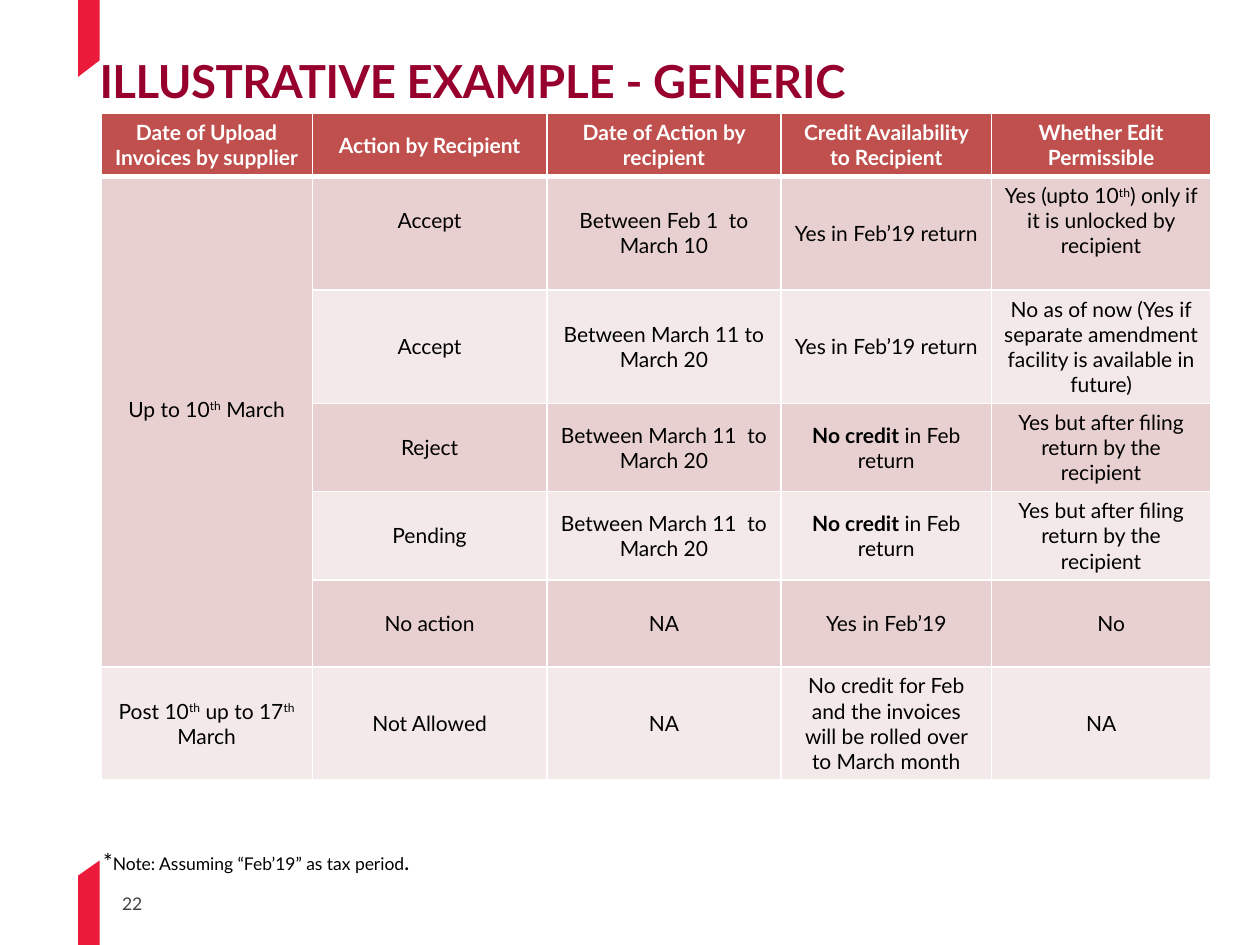
from lxml import etree
from pptx import Presentation
from pptx.dml.color import RGBColor
from pptx.enum.text import MSO_ANCHOR, PP_ALIGN
from pptx.oxml.ns import qn
from pptx.util import Inches, Pt

MIDDLE = MSO_ANCHOR.MIDDLE
CENTER = PP_ALIGN.CENTER
FONT = "Lato"
RED, MAROON = "EC1A3A", "97002D"
HEADER_FILL, BAND_FILLS = "C0504D", ("E8D0D0", "F4E9E9")
WHITE, BLACK, GREY = "FFFFFF", "000000", "404040"

COLUMN_WIDTHS = (1.68, 1.86, 1.86, 1.67, 1.74)
ROW_HEIGHTS = (0.5, 0.9, 0.9, 0.7, 0.7, 0.69, 0.89)

# A cell is plain text or a list of (text, style) runs
TH = ("th", "super")
NO_CREDIT = [("No credit", "bold"), (" in Feb return", "")]
LATE_ACTION = "Between March 11  to March 20"
EDIT_AFTER_FILING = "Yes but after filing return by the recipient"
ROWS = (
    ("Date of Upload Invoices by supplier", "Action by Recipient",
     "Date of Action by recipient", "Credit Availability to Recipient",
     "Whether Edit Permissible"),
    ([("Up to 10", ""), TH, (" March", "")], "Accept",
     "Between Feb 1  to March 10", "Yes in Feb’19 return",
     [("Yes (upto 10", ""), TH, (") only if it is unlocked by recipient", "")]),
    (None, "Accept", "Between March 11 to March 20", "Yes in Feb’19 return",
     "No as of now (Yes if separate amendment facility is available in future)"),
    (None, "Reject", LATE_ACTION, NO_CREDIT, EDIT_AFTER_FILING),
    (None, "Pending", LATE_ACTION, NO_CREDIT, EDIT_AFTER_FILING),
    (None, "No action", "NA", "Yes in Feb’19", "No"),
    ([("Post 10", ""), TH, (" up to 17", ""), TH, (" March", "")],
     "Not Allowed", "NA",
     "No credit for Feb and the invoices will be rolled over to March month",
     "NA"),
)
RAISED_CELLS = ((1, 0), (1, 1), (1, 4))
SHIFTED_CELL = (5, 4)


def rgb(color):
    return RGBColor.from_string(color)


def add_run(paragraph, text, size, color, bold=False):
    run = paragraph.add_run()
    run.text = text
    run.font.name = FONT
    run.font.size = Pt(size)
    run.font.bold = bold
    run.font.color.rgb = rgb(color)
    return run


def add_text(slide, box, runs, margins, wrap=True, space_before=0):
    frame = slide.shapes.add_textbox(*map(Inches, box)).text_frame
    frame.word_wrap = wrap
    (frame.margin_left, frame.margin_top,
     frame.margin_right, frame.margin_bottom) = map(Inches, margins)
    paragraph = frame.paragraphs[0]
    paragraph.space_before = Pt(space_before)
    return [add_run(paragraph, *run) for run in runs]


def add_ribbon(slide, points):
    start, *others = [(Inches(x), Inches(y)) for x, y in points]
    builder = slide.shapes.build_freeform(*start)
    builder.add_line_segments(others, close=True)
    ribbon = builder.convert_to_shape()
    ribbon.shadow.inherit = False
    ribbon.fill.solid()
    ribbon.fill.fore_color.rgb = rgb(RED)
    ribbon.line.fill.background()


def set_borders(cell, widths):
    properties = cell._tc.get_or_add_tcPr()
    for index, (side, width) in enumerate(zip("LRTB", widths)):
        line = etree.Element(qn(f"a:ln{side}"), w=str(Pt(width)))
        fill = etree.SubElement(line, qn("a:solidFill"))
        etree.SubElement(fill, qn("a:srgbClr"), val=WHITE)
        properties.insert(index, line)


def fill_cell(cell, content, row):
    header = row == 0
    cell.fill.solid()
    cell.fill.fore_color.rgb = rgb(HEADER_FILL if header else BAND_FILLS[(row - 1) % 2])
    set_borders(cell, (1, 1, 3 if row == 1 else 1, 3 if header else 1))
    if content is None:
        return
    cell.vertical_anchor = MIDDLE
    paragraph = cell.text_frame.paragraphs[0]
    paragraph.alignment = CENTER
    runs = [(content, "")] if isinstance(content, str) else content
    for text, style in runs:
        run = add_run(paragraph, text, 12, WHITE if header else BLACK,
                      header or style == "bold")
        if style == "super":
            run._r.get_or_add_rPr().set("baseline", "30000")


def add_credit_table(slide):
    table = slide.shapes.add_table(
        len(ROWS), len(COLUMN_WIDTHS), Inches(0.8), Inches(0.9),
        Inches(sum(COLUMN_WIDTHS)), Inches(sum(ROW_HEIGHTS))).table
    for column, width in zip(table.columns, COLUMN_WIDTHS):
        column.width = Inches(width)
    for table_row, height in zip(table.rows, ROW_HEIGHTS):
        table_row.height = Inches(height)
    for row, contents in enumerate(ROWS):
        for column, content in enumerate(contents):
            fill_cell(table.cell(row, column), content, row)
    table.cell(1, 0).merge(table.cell(5, 0))

    # Cells whose text sits off centre
    for position in RAISED_CELLS:
        table.cell(*position).margin_bottom = Inches(0.25)
    table.cell(*SHIFTED_CELL).margin_left = Inches(0.26)


def main():
    presentation = Presentation()
    presentation.slide_width = Inches(10)
    presentation.slide_height = Inches(7.5)
    slide = presentation.slides.add_slide(presentation.slide_layouts[6])

    # Ribbons at the left edge
    add_ribbon(slide, [(0.79, 6.83), (0.62, 6.95), (0.62, 7.5), (0.79, 7.5)])
    add_ribbon(slide, [(0.79, 0), (0.62, 0), (0.62, 0.61), (0.79, 0.48)])

    # Title
    title_runs = add_text(
        slide, (0.79, 0.41, 9.06, 0.92),
        [("ILLUSTRATIVE ", 26, MAROON, True),
         ("EXAMPLE - GENERIC", 26, MAROON, True)],
        (0, 0.01, 0, 0), space_before=0.9)
    for run, spacing in zip(title_runs, (-30, -10)):
        run._r.get_or_add_rPr().set("spc", str(spacing))

    add_credit_table(slide)

    # Note and page number
    add_text(slide, (0.72, 6.68, 9.31, 0.32),
             [("*", 13, BLACK),
              ("Note: Assuming “Feb’19” as tax period", 10, BLACK),
              (".", 13, BLACK)],
             (0.1, 0.05, 0.1, 0.05))
    add_text(slide, (0.94, 7.09, 0.2, 0.19), [("22", 10, GREY)],
             (0.03, 0, 0, 0), wrap=False, space_before=0.5)

    presentation.save("out.pptx")


if __name__ == "__main__":
    main()
